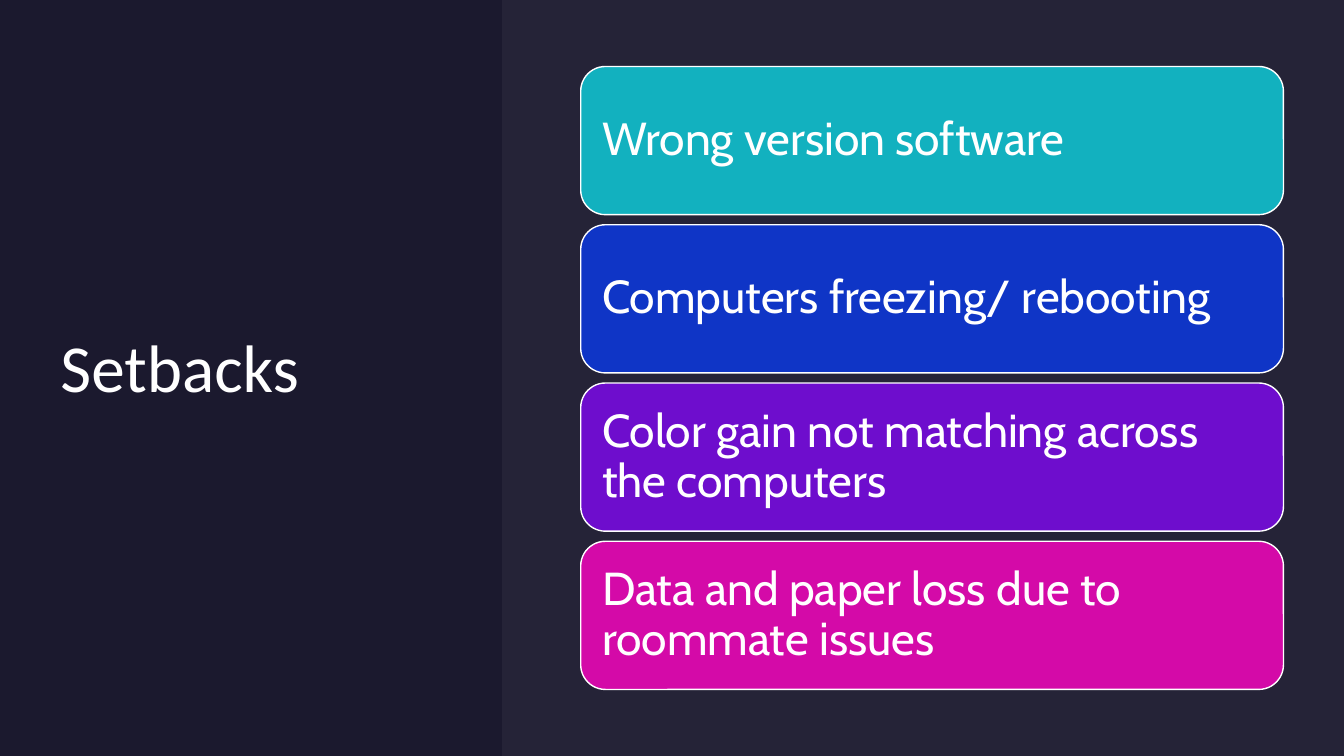
import pptx
import pptx.util
import pptx.dml.color
import pptx.enum.shapes
import pptx.enum.text
import pptx.oxml.ns
import lxml.etree

Inches = pptx.util.Inches

theme = {
    "background": "1B192E",
    "panel": "E4E3F0",
    "panel_alpha": 5,
    "text": "FFFFFF",
    "cards": ["12B1BF", "0F35C6", "6E0DCD", "D40AA8"],
    "title_font": "Calibri",
    "title_size": 48,
    "card_font": "Cabin",
    "card_size": 33,
}


def color(value):
    return pptx.dml.color.RGBColor.from_string(value)


def write(shape, text, font, size, inset):
    frame = shape.text_frame
    frame.word_wrap = True
    frame.vertical_anchor = pptx.enum.text.MSO_ANCHOR.MIDDLE
    frame.margin_left = frame.margin_right = Inches(inset)
    frame.margin_top = frame.margin_bottom = Inches(inset)
    paragraph = frame.paragraphs[0]
    paragraph.alignment = pptx.enum.text.PP_ALIGN.LEFT
    run = paragraph.add_run()
    run.text = text
    run.font.name = font
    run.font.size = pptx.util.Pt(size)
    run.font.color.rgb = color(theme["text"])
    return paragraph


deck = pptx.Presentation()
deck.slide_width = Inches(13.33)
deck.slide_height = Inches(7.5)
slide = deck.slides.add_slide(deck.slide_layouts[6])
slide.background.fill.solid()
slide.background.fill.fore_color.rgb = color(theme["background"])

panel = slide.shapes.add_shape(
    pptx.enum.shapes.MSO_SHAPE.RECTANGLE,
    Inches(4.98), Inches(0), Inches(8.35), Inches(7.5))
panel.shadow.inherit = False
panel.fill.solid()
panel.fill.fore_color.rgb = color(theme["panel"])
panel.line.fill.background()
panel_color = panel.fill._xPr.find(".//" + pptx.oxml.ns.qn("a:srgbClr"))
alpha = lxml.etree.SubElement(panel_color, pptx.oxml.ns.qn("a:alpha"))
alpha.set("val", str(theme["panel_alpha"] * 1000))

title = slide.shapes.add_textbox(Inches(0.6), Inches(0.6), Inches(3.9), Inches(6.06))
write(title, "Setbacks", theme["title_font"], theme["title_size"], 0)

setbacks = [
    "Wrong version software",
    "Computers freezing/ rebooting",
    "Color gain not matching across the computers",
    "Data and paper loss due to roommate issues",
]
first_top, card_height, card_gap = 0.66, 1.47, 0.1

for index, (setback, card_color) in enumerate(zip(setbacks, theme["cards"])):
    card = slide.shapes.add_shape(
        pptx.enum.shapes.MSO_SHAPE.ROUNDED_RECTANGLE,
        Inches(5.76), Inches(first_top + index * (card_height + card_gap)),
        Inches(6.97), Inches(card_height))
    card.shadow.inherit = False
    card.fill.solid()
    card.fill.fore_color.rgb = color(card_color)
    card.line.color.rgb = color(theme["text"])
    card.line.width = pptx.util.Pt(1)
    paragraph = write(card, setback, theme["card_font"], theme["card_size"], 0.14)
    paragraph.line_spacing = 0.9

deck.save("out.pptx")
